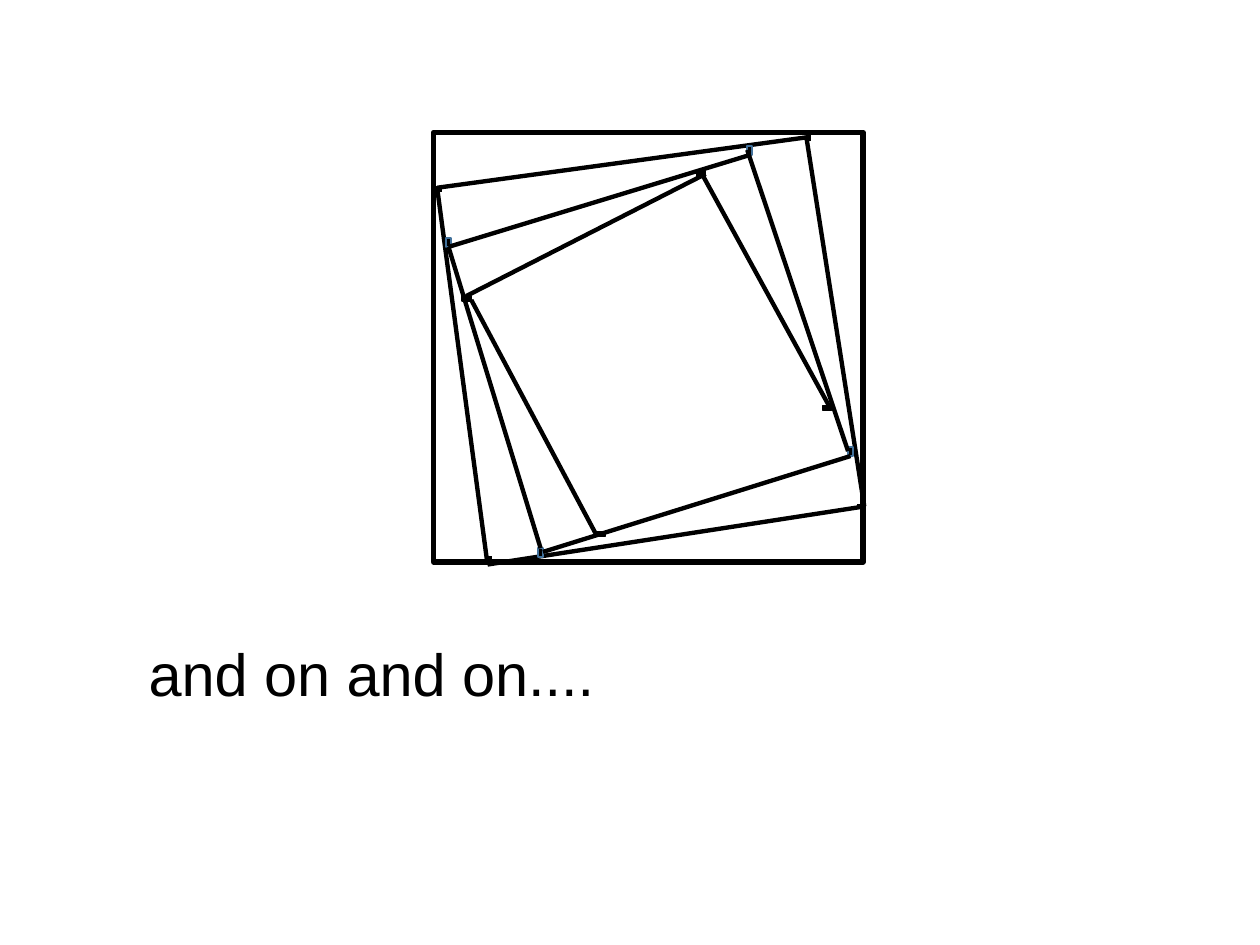
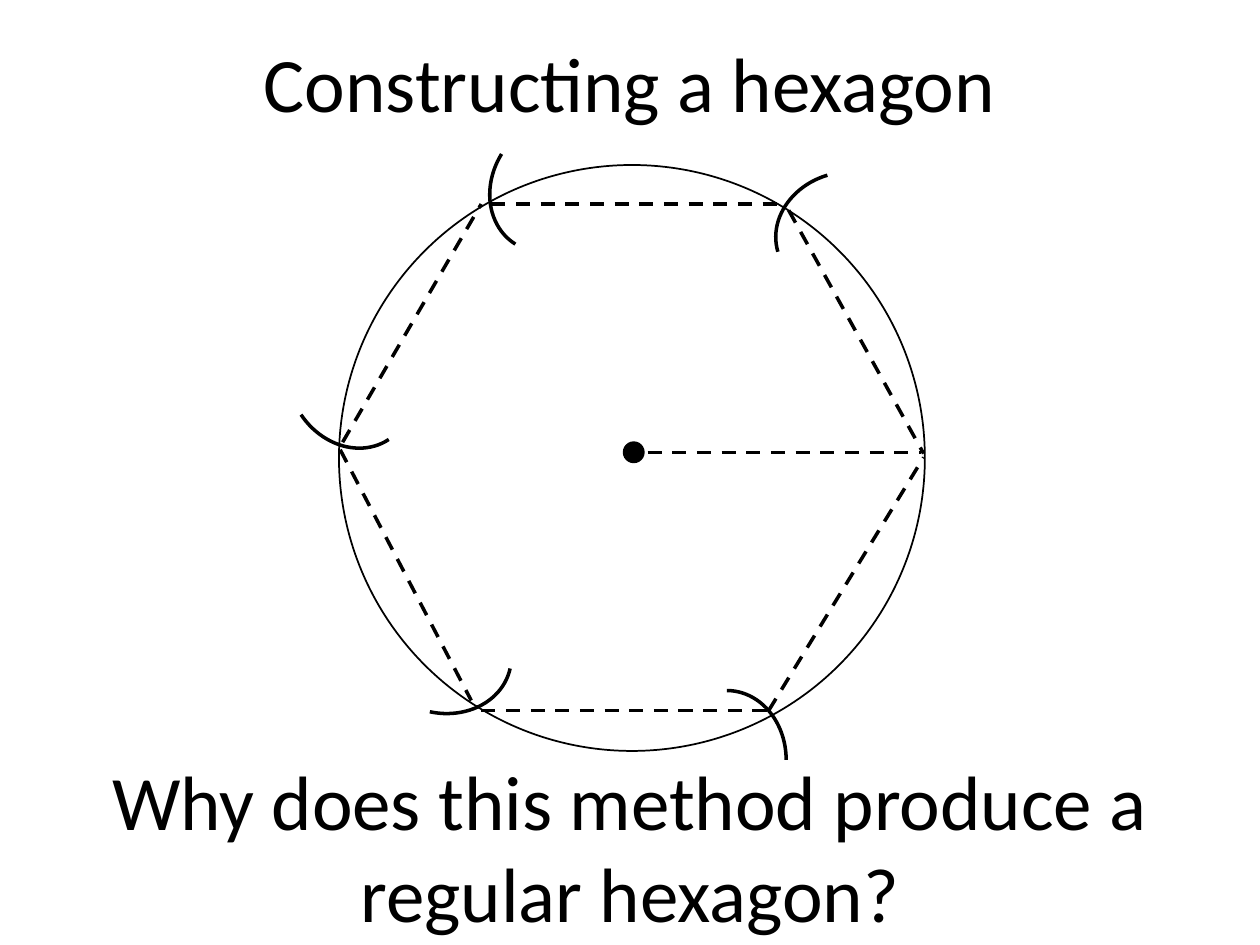
"""Builds two geometry slides: nested squares and the compass construction of a hexagon."""
from dataclasses import dataclass
from typing import Optional

from lxml import etree
from pptx import Presentation
from pptx import util as u
from pptx.dml.color import RGBColor
from pptx.enum import dml, shapes, text
from pptx.oxml import ns

Pt = u.Pt
COLOURS = {"ink": "000000", "paper": "FFFFFF", "steel": "42719B"}
SLIDE_WIDTH, SLIDE_HEIGHT = 720, 540


@dataclass(frozen=True)
class Segment:
    x1: float
    y1: float
    x2: float
    y2: float
    weight: float = 2.5
    dashed: bool = False


@dataclass(frozen=True)
class Figure:
    kind: shapes.MSO_SHAPE
    left: float
    top: float
    width: float
    height: float
    weight: float = 1
    fill: Optional[str] = None
    line: str = "ink"
    rotation: float = 0


@dataclass(frozen=True)
class Caption:
    words: str
    left: float
    top: float
    width: float
    height: float
    font: str = "Calibri"
    size: float = 44
    align: text.PP_ALIGN = text.PP_ALIGN.CENTER


SQUARE_LEFT, SQUARE_TOP, SQUARE_SIDE = 247.7, 75.6, 245.5
TICKS = [
    Segment(462.2, 77, 462.2, 80.6, 3),
    Segment(279.4, 319.7, 279.4, 317.5, 3),
    Segment(491.8, 289.4, 489.6, 289.4, 3),
    Segment(249.1, 108, 252.7, 108, 3),
]
OUTER_CORNERS = [(460.8, 78.5), (249.8, 107.3), (278.6, 322.6), (493.9, 289.4)]
OUTER_SIDES = [
    Segment(*start, *end)
    for start, end in zip(OUTER_CORNERS, OUTER_CORNERS[1:] + OUTER_CORNERS[:1])
]
MIDDLE_MARKS = [
    Figure(shapes.MSO_SHAPE.RECTANGLE, left, top, 2.9, 5, fill="ink", line="steel")
    for left, top in [(307.4, 313.2), (254.9, 136.1), (427, 83.5), (484.6, 255.6)]
]
MIDDLE_SIDES = [
    Segment(427, 85.7, 484.6, 257.8),
    Segment(428.4, 88.6, 256.3, 141.1),
    Segment(308.9, 313.2, 256.3, 141.1),
    Segment(310.3, 315.4, 486, 260.6),
]
INNER_MARKS = [
    Figure(shapes.MSO_SHAPE.RECTANGLE, left, top, 5, 2.9, fill="ink")
    for left, top in [(340.6, 303.8), (264.2, 169.2), (398.2, 97.9), (470.2, 231.8)]
]
INNER_SIDES = [
    Segment(400.3, 97.9, 474.5, 233.3),
    Segment(403.2, 99.4, 266.4, 169.2),
    Segment(340.6, 305.3, 269.3, 171.4),
]
NESTED_SQUARES = (
    TICKS + OUTER_SIDES + MIDDLE_MARKS + MIDDLE_SIDES + INNER_MARKS + INNER_SIDES
)

CIRCLE = Figure(shapes.MSO_SHAPE.OVAL, 193.7, 94.3, 334.8, 334.8)
CENTRE = Figure(shapes.MSO_SHAPE.OVAL, 356.4, 252.7, 11.5, 11.5, fill="ink")
RADIUS = Segment(370.1, 258.5, 526.3, 258.5, 2, True)
COMPASS_ARCS = [
    Figure(shapes.MSO_SHAPE.ARC, left, top, 67.7, 79.2, 2, rotation=rotation)
    for left, top, rotation in [
        (448.6, 92.9, 253.4),
        (281.5, 66.2, 211.8),
        (166.3, 178.6, 146.3),
        (218.9, 334.1, 102.2),
        (381.6, 394.6, 0),
    ]
]
HEXAGON_SIDES = [
    Segment(*ends, 2, True)
    for ends in [
        (450.7, 120.2, 527.8, 259.2),
        (280.8, 116.6, 445, 116.6),
        (195.8, 252.7, 275, 116.6),
        (194.4, 257, 269.3, 400.3),
        (275, 406.1, 439.2, 406.1),
        (439.2, 406.1, 527.8, 261.4),
    ]
]
HEXAGON = [CIRCLE, CENTRE, RADIUS] + COMPASS_ARCS + HEXAGON_SIDES


def colour(name: str) -> RGBColor:
    """Return the named colour."""
    return RGBColor.from_string(COLOURS[name])


def style_line(line, weight: float, name: str = "ink") -> None:
    """Give a line its colour and weight."""
    line.color.rgb = colour(name)
    line.width = Pt(weight)


def draw_segment(canvas, segment: Segment) -> None:
    """Draw a straight line without a shadow."""
    ends = (segment.x1, segment.y1, segment.x2, segment.y2)
    connector = canvas.add_connector(shapes.MSO_CONNECTOR.STRAIGHT, *map(Pt, ends))
    style_line(connector.line, segment.weight)
    if segment.dashed:
        connector.line.dash_style = dml.MSO_LINE.DASH
    etree.SubElement(connector._element.spPr, ns.qn("a:effectLst"))


def draw_figure(canvas, figure: Figure) -> None:
    """Draw a preset shape."""
    box = (figure.left, figure.top, figure.width, figure.height)
    shape = canvas.add_shape(figure.kind, *map(Pt, box))
    shape.shadow.inherit = False
    shape.rotation = figure.rotation
    style_line(shape.line, figure.weight, figure.line)
    if figure.fill:
        shape.fill.solid()
        shape.fill.fore_color.rgb = colour(figure.fill)
    else:
        shape.fill.background()


def draw_all(canvas, parts: list) -> None:
    """Draw segments and figures from back to front."""
    for part in parts:
        draw = draw_segment if isinstance(part, Segment) else draw_figure
        draw(canvas, part)


def draw_outline_square(canvas) -> None:
    """Draw the outermost square."""
    right, bottom = SQUARE_LEFT + SQUARE_SIDE, SQUARE_TOP + SQUARE_SIDE
    builder = canvas.build_freeform(Pt(SQUARE_LEFT), Pt(SQUARE_TOP))
    corners = [(right, SQUARE_TOP), (right, bottom), (SQUARE_LEFT, bottom)]
    builder.add_line_segments([(Pt(x), Pt(y)) for x, y in corners], close=True)
    shape = builder.convert_to_shape()
    shape.shadow.inherit = False
    shape.fill.background()
    style_line(shape.line, 3)


def draw_caption(slide, caption: Caption) -> None:
    """Draw one paragraph of text."""
    box = (caption.left, caption.top, caption.width, caption.height)
    frame = slide.shapes.add_textbox(*map(Pt, box)).text_frame
    frame.word_wrap = True
    paragraph = frame.paragraphs[0]
    paragraph.alignment = caption.align
    run = paragraph.add_run()
    run.text = caption.words
    run.font.name = caption.font
    run.font.size = Pt(caption.size)
    run.font.color.rgb = colour("ink")


def add_slide(presentation):
    """Add a blank slide on white."""
    slide = presentation.slides.add_slide(presentation.slide_layouts[6])
    slide.background.fill.solid()
    slide.background.fill.fore_color.rgb = colour("paper")
    return slide


def build_squares_slide(presentation) -> None:
    """Build the slide of nested squares."""
    slide = add_slide(presentation)
    group = slide.shapes.add_group_shape()
    draw_outline_square(group.shapes)
    draw_all(group.shapes, NESTED_SQUARES)
    draw_caption(slide, Caption("and on and on....", 77.8, 360.7, 578.9, 48.2,
                                "Arial", 34, text.PP_ALIGN.LEFT))


def build_hexagon_slide(presentation) -> None:
    """Build the slide of the hexagon construction."""
    slide = add_slide(presentation)
    draw_caption(slide, Caption("Why does this method produce a regular hexagon?",
                                0, 427, SLIDE_WIDTH, 113))
    draw_all(slide.shapes, HEXAGON)
    draw_caption(slide, Caption("Constructing a hexagon", 0, 16.6, SLIDE_WIDTH, 60.5))


def main() -> None:
    """Build and save the presentation."""
    presentation = Presentation()
    presentation.slide_width = Pt(SLIDE_WIDTH)
    presentation.slide_height = Pt(SLIDE_HEIGHT)
    build_squares_slide(presentation)
    build_hexagon_slide(presentation)
    presentation.save("out.pptx")


if __name__ == "__main__":
    main()
